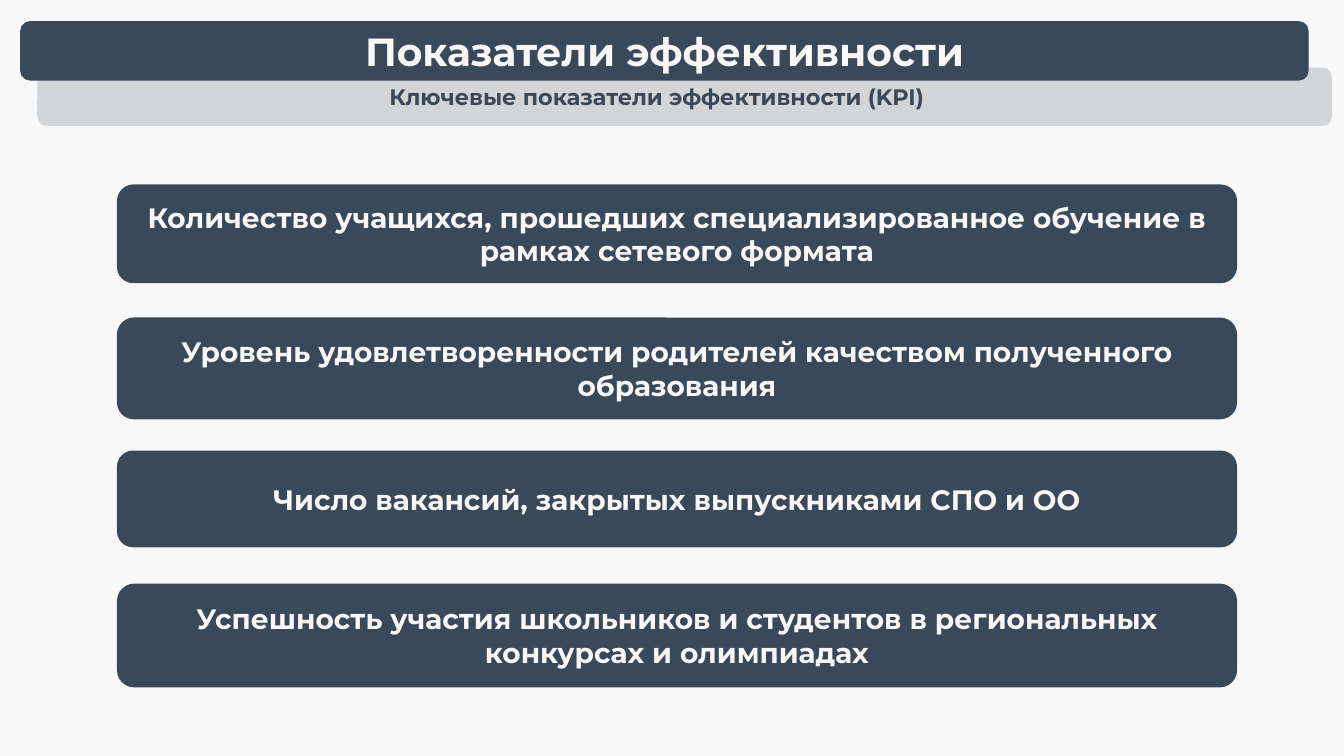
from dataclasses import dataclass

from lxml.etree import SubElement
from pptx import Presentation
from pptx.dml.color import RGBColor
from pptx.enum.shapes import MSO_SHAPE as Shape
from pptx.enum.text import MSO_ANCHOR as Anchor, PP_ALIGN as Align
from pptx.oxml.ns import qn
from pptx.util import Inches, Pt


@dataclass(frozen=True)
class Theme:
    slate: RGBColor = RGBColor(0x39, 0x49, 0x59)
    paper: RGBColor = RGBColor(0xF8, 0xF8, 0xF8)
    font: str = "Montserrat"
    title_size: int = 28
    card_size: int = 20
    subtitle_size: int = 16
    band_opacity: int = 20


THEME = Theme()
TITLE = "Показатели эффективности"
SUBTITLE = "Ключевые показатели эффективности (KPI)"
INDICATORS = [
    ("Количество учащихся, прошедших специализированное обучение в рамках сетевого формата", 0.98),
    ("Уровень удовлетворенности родителей качеством полученного образования", 1.01),
    ("Число вакансий, закрытых выпускниками СПО и ОО", 0.96),
    ("Успешность участия школьников и студентов в региональных конкурсах и олимпиадах", 1.03),
]
CARD_PITCH = 1.32


def write_text(shape, text, size, color, anchor):
    frame = shape.text_frame
    frame.word_wrap = True
    frame.vertical_anchor = anchor
    frame.text = text
    para = frame.paragraphs[0]
    para.alignment = Align.CENTER
    font = para.runs[0].font
    font.name = THEME.font
    font.size = Pt(size)
    font.bold = True
    font.color.rgb = color


def add_panel(page, left, top, width, height):
    panel = page.shapes.add_shape(
        Shape.ROUNDED_RECTANGLE, Inches(left), Inches(top), Inches(width), Inches(height)
    )
    panel.shadow.inherit = False
    panel.fill.solid()
    panel.fill.fore_color.rgb = THEME.slate
    panel.line.fill.background()
    return panel


def set_opacity(shape, percent):
    color = next(shape.element.spPr.iter(qn("a:srgbClr")))
    SubElement(color, qn("a:alpha"), val=str(percent * 1000))


def add_header(page, left, top, width):
    band = add_panel(page, left + 0.17, top + 0.46, width + 0.06, 0.58)
    set_opacity(band, THEME.band_opacity)
    subtitle = page.shapes.add_textbox(
        Inches(left + 1.53), Inches(top + 0.57), Inches(9.57), Inches(0.37)
    )
    write_text(subtitle, SUBTITLE, THEME.subtitle_size, THEME.slate, Anchor.TOP)
    banner = add_panel(page, left, top, width, 0.59)
    write_text(banner, TITLE, THEME.title_size, THEME.paper, Anchor.MIDDLE)


def add_indicators(page, left, top, width):
    for row, (text, height) in enumerate(INDICATORS):
        card = add_panel(page, left, top + row * CARD_PITCH, width, height)
        write_text(card, text, THEME.card_size, THEME.paper, Anchor.MIDDLE)


def main():
    deck = Presentation()
    deck.slide_width = Inches(13.33)
    deck.slide_height = Inches(7.5)
    page = deck.slides.add_slide(deck.slide_layouts[6])
    page.background.fill.solid()
    page.background.fill.fore_color.rgb = THEME.paper
    add_header(page, 0.2, 0.21, 12.78)
    add_indicators(page, 1.16, 1.83, 11.11)
    deck.save("out.pptx")


if __name__ == "__main__":
    main()
